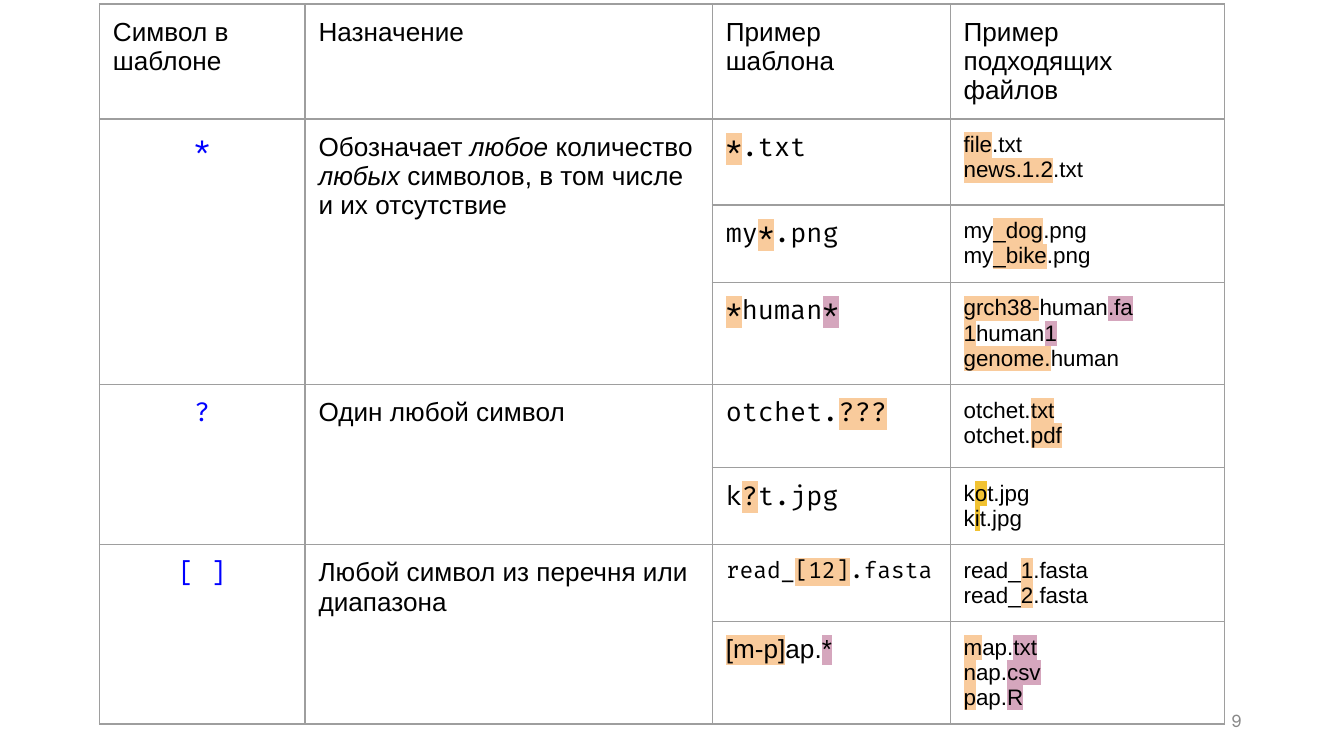
import dataclasses
import typing

import lxml.etree
import pptx
import pptx.dml.color
import pptx.enum.text
import pptx.oxml.ns
import pptx.util

Inches = pptx.util.Inches
Pt = pptx.util.Pt
Align = pptx.enum.text.PP_ALIGN
qn = pptx.oxml.ns.qn


@dataclasses.dataclass(frozen=True)
class Theme:
    ink: str = "000000"
    symbol: str = "0000FF"
    border: str = "9E9E9E"
    muted: str = "888888"
    orange: str = "F9CB9C"
    pink: str = "D5A6BD"
    gold: str = "F1C232"
    body: str = "Arial"
    code: str = "Fira Code"
    number: str = "Inter"
    body_size: float = 14
    small_size: float = 12
    number_size: float = 9
    border_width: float = 0.75
    cell_margin: float = 0.1


THEME = Theme()
SLIDE_WIDTH = 10
SLIDE_HEIGHT = SLIDE_WIDTH * 9 / 16


class Piece(typing.NamedTuple):
    text: str
    highlight: str | None = None
    italic: bool = False


Line = list[Piece]


class Pattern(typing.NamedTuple):
    sample: Line
    matches: list[Line]
    font: str = THEME.code
    size: float = THEME.body_size


class Wildcard(typing.NamedTuple):
    symbol: str
    meaning: Line
    patterns: list[Pattern]


def plain(text: str) -> Piece:
    return Piece(text)


def italic(text: str) -> Piece:
    return Piece(text, italic=True)


def orange(text: str) -> Piece:
    return Piece(text, THEME.orange)


def pink(text: str) -> Piece:
    return Piece(text, THEME.pink)


def gold(text: str) -> Piece:
    return Piece(text, THEME.gold)


HEADINGS = ["Символ в шаблоне", "Назначение", "Пример шаблона", "Пример подходящих файлов"]
COLUMN_WIDTHS = [1.53, 3.03, 1.77, 2.04]
ROW_HEIGHTS = [0.61, 0.64, 0.42, 0.11, 0.62, 0.11, 0.11, 0.11]

WILDCARDS = [
    Wildcard(
        "*",
        [plain("Обозначает "), italic("любое "), plain("количество "), italic("любых "),
         plain("символов, в том числе и их отсутствие")],
        [
            Pattern([orange("*"), plain(".txt")],
                    [[orange("file"), plain(".txt")], [orange("news.1.2"), plain(".txt")]]),
            Pattern([plain("my"), orange("*"), plain(".png")],
                    [[plain("my"), orange(ending), plain(".png")] for ending in ("_dog", "_bike")]),
            Pattern([orange("*"), plain("human"), pink("*")],
                    [[orange("grch38-"), plain("human"), pink(".fa")],
                     [orange("1"), plain("human"), pink("1")],
                     [orange("genome."), plain("human")]]),
        ],
    ),
    Wildcard(
        "?",
        [plain("Один любой символ")],
        [
            Pattern([plain("otchet."), orange("???")],
                    [[plain("otchet."), orange(ending)] for ending in ("txt", "pdf")]),
            Pattern([plain("k"), orange("?"), plain("t.jpg")],
                    [[plain("k"), gold(vowel), plain("t.jpg")] for vowel in "oi"]),
        ],
    ),
    Wildcard(
        "[ ]",
        [plain("Любой символ из перечня или диапазона")],
        [
            Pattern([plain("read_"), orange("[12]"), plain(".fasta")],
                    [[plain("read_"), orange(digit), plain(".fasta")] for digit in "12"],
                    size=THEME.small_size),
            Pattern([orange("[m-p]"), plain("ap."), pink("*")],
                    [[orange(letter), plain("ap."), pink(ending)]
                     for letter, ending in zip("mnp", ("txt", "csv", "R"))],
                    font=THEME.body),
        ],
    ),
]


def add_text(paragraph, text: str, *, size: float = THEME.body_size, font: str = THEME.body,
             color: str = THEME.ink, italic: bool = False, highlight: str | None = None) -> None:
    run = paragraph.add_run()
    run.text = text
    run.font.size = Pt(size)
    run.font.bold = False
    run.font.italic = italic
    run.font.color.rgb = pptx.dml.color.RGBColor.from_string(color)
    run.font.name = font
    if highlight:
        properties = run._r.get_or_add_rPr()
        mark = lxml.etree.Element(qn("a:highlight"))
        lxml.etree.SubElement(mark, qn("a:srgbClr"), val=highlight)
        properties.find(qn("a:solidFill")).addnext(mark)


def fill_cell(cell, lines: list[Line], align=Align.LEFT, **text_format) -> None:
    frame = cell.text_frame
    for index, line in enumerate(lines):
        paragraph = frame.paragraphs[0] if index == 0 else frame.add_paragraph()
        paragraph.alignment = align
        for piece in line:
            add_text(paragraph, piece.text, italic=piece.italic,
                     highlight=piece.highlight, **text_format)


def style_cell(cell) -> None:
    margin = Inches(THEME.cell_margin)
    cell.margin_left = cell.margin_right = cell.margin_top = cell.margin_bottom = margin
    properties = cell._tc.get_or_add_tcPr()
    for side in ("lnL", "lnR", "lnT", "lnB"):
        edge = lxml.etree.SubElement(properties, qn(f"a:{side}"), w=str(Pt(THEME.border_width)))
        paint = lxml.etree.SubElement(edge, qn("a:solidFill"))
        lxml.etree.SubElement(paint, qn("a:srgbClr"), val=THEME.border)
    cell.fill.background()


def add_wildcard(table, top: int, wildcard: Wildcard) -> int:
    bottom = top + len(wildcard.patterns) - 1
    for column in (0, 1):
        table.cell(top, column).merge(table.cell(bottom, column))
    fill_cell(table.cell(top, 0), [[plain(wildcard.symbol)]], Align.CENTER,
              font=THEME.code, color=THEME.symbol)
    fill_cell(table.cell(top, 1), [wildcard.meaning])
    for row, pattern in enumerate(wildcard.patterns, top):
        fill_cell(table.cell(row, 2), [pattern.sample], font=pattern.font, size=pattern.size)
        fill_cell(table.cell(row, 3), pattern.matches, size=THEME.small_size)
    return bottom + 1


def add_wildcard_table(slide) -> None:
    table = slide.shapes.add_table(
        len(ROW_HEIGHTS), len(COLUMN_WIDTHS), Inches(0.74), Inches(0.03),
        Inches(sum(COLUMN_WIDTHS)), Inches(sum(ROW_HEIGHTS))).table
    table.first_row = table.horz_banding = False
    for column, width in zip(table.columns, COLUMN_WIDTHS):
        column.width = Inches(width)
    for row, height in zip(table.rows, ROW_HEIGHTS):
        row.height = Inches(height)
    for cell in table.iter_cells():
        style_cell(cell)
    for column, heading in enumerate(HEADINGS):
        fill_cell(table.cell(0, column), [[plain(heading)]])
    top = 1
    for wildcard in WILDCARDS:
        top = add_wildcard(table, top, wildcard)


def add_page_number(slide, number: str) -> None:
    frame = slide.shapes.add_textbox(Inches(7.06), Inches(5.21), Inches(2.25), Inches(0.3)).text_frame
    frame.word_wrap = True
    frame.vertical_anchor = pptx.enum.text.MSO_ANCHOR.MIDDLE
    frame.margin_left = frame.margin_right = Inches(0.07)
    frame.margin_top = frame.margin_bottom = Inches(0.04)
    frame.paragraphs[0].alignment = Align.RIGHT
    add_text(frame.paragraphs[0], number, size=THEME.number_size, font=THEME.number, color=THEME.muted)


def main() -> None:
    deck = pptx.Presentation()
    deck.slide_width = Inches(SLIDE_WIDTH)
    deck.slide_height = Inches(SLIDE_HEIGHT)
    slide = deck.slides.add_slide(deck.slide_layouts[6])
    add_wildcard_table(slide)
    add_page_number(slide, "9")
    deck.save("out.pptx")


if __name__ == "__main__":
    main()
